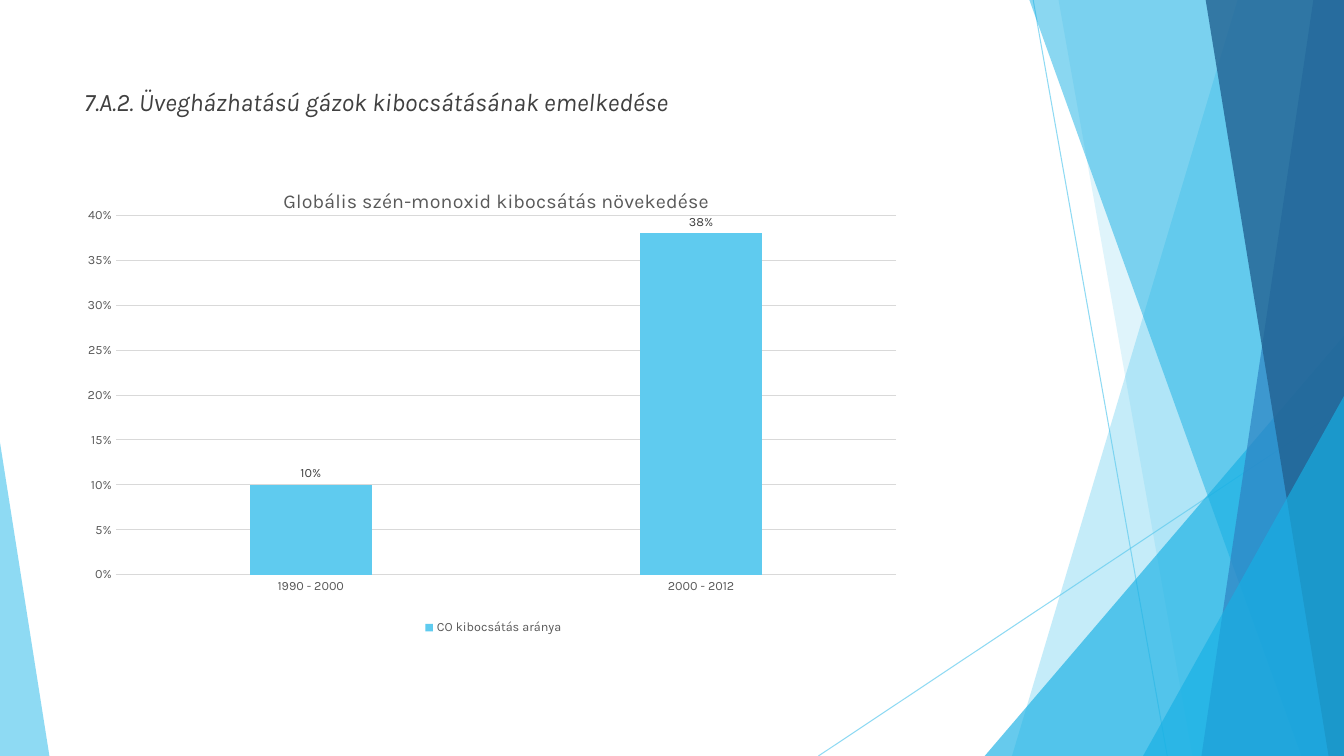
import pptx
import pptx.chart.data
import pptx.dml.color
import pptx.enum.chart
import pptx.enum.shapes
import pptx.oxml
import pptx.oxml.ns
import pptx.util

Pt = pptx.util.Pt
FONT = "Karla"
WIDTH, HEIGHT = 960, 540
BLEED_TOP = -0.6

HEADING = "7.A.2. Üvegházhatású gázok kibocsátásának emelkedése"
HEADING_BOX = (53.3, 58.3, 676.8, 417.6)

CHART_TITLE = "Globális szén-monoxid kibocsátás növekedése"
PERIODS = ("1990 - 2000", "2000 - 2012")
SERIES_NAME = "CO kibocsátás aránya"
GROWTH = (0.1, 0.38)
CHART_BOX = (53.3, 118.8, 598.3, 337.7)
TITLE_PLACE = {"x": 0.245, "y": 0.04}
PLOT_PLACE = {"x": 0.049, "y": 0.104, "w": 0.932, "h": 0.76}

SKY, AZURE, BLUE, NAVY = "5FCBEF", "17B0E4", "2E83C3", "226292"
GREY, DARK, PALE = "595959", "404040", "D9D9D9"

# start x, start y, end x, end y
RAYS = [(738, 0, 833.8, 540), (960, 290.2, 584.6, 540)]
# "band": x at the top, x at the bottom; it reaches to the right edge
# "wedge": left, top, width, position of the apex; it reaches to the bottom edge
FACETS = [
    ("band", (884.2, 722.9), SKY, 36),
    ("band", (756, 851.8), SKY, 20),
    ("wedge", (703.4, 239.8, 256.6, 1), AZURE, 66),
    ("band", (735.1, 929.5), AZURE, 50),
    ("band", (938.2, 858.2), BLUE, 70),
    ("band", (861.1, 949), NAVY, 80),
    ("wedge", (816.5, 283, 143.5, 1), AZURE, 66),
    ("wedge", (0, 316.1, 35.3, 0), SKY, 70),
]


def paint(fill, colour, opacity=100):
    """Make the fill solid, with opacity in percent."""
    fill.solid()
    fill.fore_color.rgb = pptx.dml.color.RGBColor.from_string(colour)
    if opacity < 100:
        rgb = fill._xPr.find(".//" + pptx.oxml.ns.qn("a:srgbClr"))
        rgb.append(pptx.oxml.parse_xml(
            f'<a:alpha {pptx.oxml.ns.nsdecls("a")} val="{opacity * 1000}"/>'))


def style(font, size, colour):
    font.name, font.size = FONT, Pt(size)
    font.bold = False
    paint(font.fill, colour)


def place(parent, fractions, inner=False):
    """Set a manual chart layout on a title or plot area element."""
    target = '<c:layoutTarget val="inner"/>' if inner else ""
    modes = "".join(f'<c:{key}Mode val="edge"/>' for key in "xy")
    values = "".join(f'<c:{key} val="{value}"/>' for key, value in fractions.items())
    layout = pptx.oxml.parse_xml(
        f'<c:layout {pptx.oxml.ns.nsdecls("c")}><c:manualLayout>'
        f'{target}{modes}{values}</c:manualLayout></c:layout>')
    for old in parent.findall(pptx.oxml.ns.qn("c:layout")):
        parent.remove(old)
    text = parent.find(pptx.oxml.ns.qn("c:tx"))
    parent.insert(0 if text is None else 1, layout)


def add_ray(shapes, ends):
    ray = shapes.add_connector(
        pptx.enum.shapes.MSO_CONNECTOR.STRAIGHT, *map(Pt, ends))
    ray.line.width = Pt(0.75)
    paint(ray.line.fill, SKY, 70)
    ray._element.spPr.append(pptx.oxml.parse_xml(
        f'<a:effectLst {pptx.oxml.ns.nsdecls("a")}/>'))


def add_facet(shapes, kind, geometry, colour, opacity):
    if kind == "band":
        top_x, bottom_x = geometry
        outline = shapes.build_freeform(Pt(top_x), Pt(BLEED_TOP))
        corners = [(WIDTH, BLEED_TOP), (WIDTH, HEIGHT), (bottom_x, HEIGHT)]
        outline.add_line_segments([(Pt(x), Pt(y)) for x, y in corners])
        facet = outline.convert_to_shape()
    else:
        left, top, width, apex = geometry
        facet = shapes.add_shape(
            pptx.enum.shapes.MSO_SHAPE.ISOSCELES_TRIANGLE,
            *map(Pt, (left, top, width, HEIGHT - top)))
        facet.adjustments[0] = apex
    paint(facet.fill, colour, opacity)
    facet.line.fill.background()
    facet.shadow.inherit = False


def add_heading(shapes):
    frame = shapes.add_textbox(*map(Pt, HEADING_BOX)).text_frame
    frame.word_wrap = True
    frame.text = HEADING
    paragraph = frame.paragraphs[0]
    paragraph.space_before = Pt(10)
    style(paragraph.runs[0].font, 18, DARK)
    paragraph.runs[0].font.italic = True


def add_growth_chart(shapes):
    growth = pptx.chart.data.CategoryChartData(number_format="0%")
    growth.categories = PERIODS
    growth.add_series(SERIES_NAME, GROWTH)
    chart = shapes.add_chart(
        pptx.enum.chart.XL_CHART_TYPE.COLUMN_CLUSTERED,
        *map(Pt, CHART_BOX), growth).chart
    style(chart.font, 10, "000000")

    chart.has_title = True
    title = chart.chart_title
    title.text_frame.text = CHART_TITLE
    style(title.text_frame.paragraphs[0].runs[0].font, 14, GREY)
    title.include_in_layout = False
    place(title._element, TITLE_PLACE)
    place(chart._chartSpace.chart.plotArea, PLOT_PLACE, inner=True)

    chart.has_legend = True
    chart.legend.position = pptx.enum.chart.XL_LEGEND_POSITION.BOTTOM
    chart.legend.include_in_layout = False
    style(chart.legend.font, 9, GREY)

    periods, shares = chart.category_axis, chart.value_axis
    for axis in (periods, shares):
        axis.major_tick_mark = pptx.enum.chart.XL_TICK_MARK.NONE
        axis.minor_tick_mark = pptx.enum.chart.XL_TICK_MARK.NONE
        style(axis.tick_labels.font, 9, GREY)
    shares.minimum_scale, shares.maximum_scale, shares.major_unit = 0, 0.4, 0.05
    shares.tick_labels.number_format = "0%"
    shares.tick_labels.number_format_is_linked = False
    shares.format.line.fill.background()
    shares.has_major_gridlines = True
    for line in (periods.format.line, shares.major_gridlines.format.line):
        line.width = Pt(0.75)
        paint(line.fill, PALE)

    columns = chart.plots[0]
    columns.gap_width, columns.overlap = 219, -27
    columns.vary_by_categories = False
    paint(columns.series[0].format.fill, SKY)
    columns.has_data_labels = True
    labels = columns.data_labels
    labels.show_value = True
    labels.number_format = "0%"
    labels.number_format_is_linked = False
    labels.position = pptx.enum.chart.XL_LABEL_POSITION.OUTSIDE_END
    style(labels.font, 9, DARK)


def main():
    deck = pptx.Presentation()
    deck.slide_width, deck.slide_height = Pt(WIDTH), Pt(HEIGHT)
    slide = deck.slides.add_slide(deck.slide_layouts[6])
    paint(slide.background.fill, "FFFFFF")
    for ends in RAYS:
        add_ray(slide.shapes, ends)
    for facet in FACETS:
        add_facet(slide.shapes, *facet)
    add_heading(slide.shapes)
    add_growth_chart(slide.shapes)
    deck.save("out.pptx")


if __name__ == "__main__":
    main()
